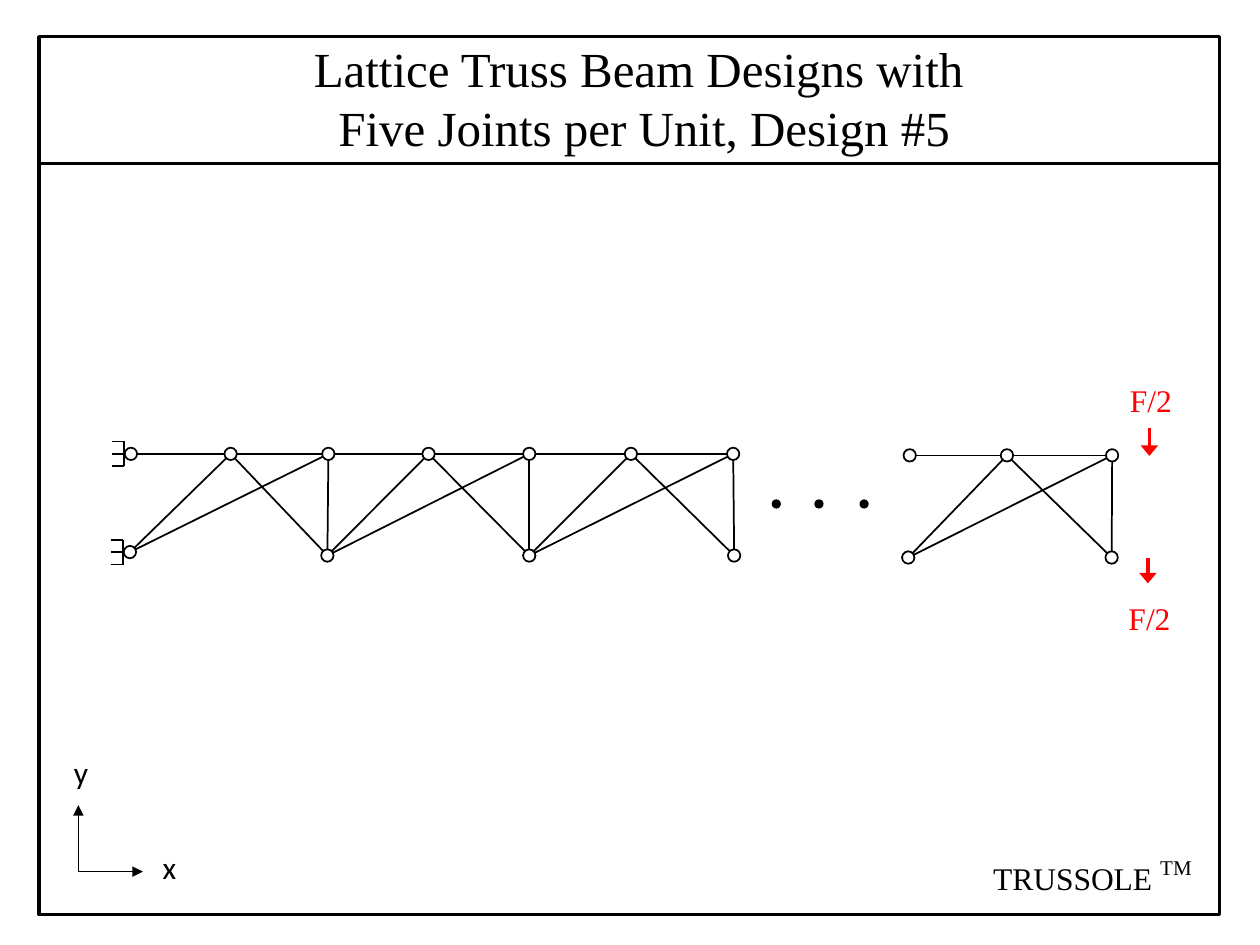
from pptx import Presentation
from pptx.dml.color import RGBColor as Rgb
from pptx.enum.shapes import MSO_CONNECTOR as Link, MSO_SHAPE as Kind
from pptx.enum.text import PP_ALIGN as Align
from pptx.oxml.ns import qn
from pptx.util import Cm, Pt
from lxml.etree import SubElement as Sub

BLACK, WHITE, RED = "000000", "FFFFFF", "FF0000"
SERIF, SANS = "Times New Roman", "Calibri"

TITLE = ["Lattice Truss Beam Designs with", "Five Joints per Unit, Design #5"]
FRAME = (0.79, 0.74, 23.8, 17.7)
RULE = 3.3
RUNS = [
    {"top": [2.64, 4.65, 6.62, 8.64, 10.67, 12.72, 14.78], "high": 9.15,
     "base": [(2.62, 11.13), (6.6, 11.2), (10.67, 11.2), (14.8, 11.2)]},
    {"top": [18.34, 20.3, 22.42], "high": 9.18,
     "base": [(18.31, 11.24), (22.41, 11.24)]},
]
JOINT, DOT = 0.25, 0.15
DOTS = [(15.65, 10.16), (16.51, 10.16), (17.42, 10.16)]
LOADS = [((23.17, 8.63), (23.17, 9.19)), ((23.14, 11.25), (23.14, 11.76))]
LOAD_TEXT = [("F/2", 22.53, 7.55, 1.5), ("F/2", 22.5, 11.96, 1.5)]
ORIGIN = (1.58, 17.57)
TIPS = [(2.88, 17.57), (1.58, 16.23)]
AXIS_TEXT = [("x", 3.03, 16.97, 0.79), ("y", 1.24, 15.06, 0.79)]
MARK = [("TRUSSOLE", 19.77, 17.2, 3.86, 18), ("TM", 23.14, 17.11, 1.3, 12)]


def color(code):
    return Rgb.from_string(code)


def line(host, start, end, ink=BLACK, width=1, head=None):
    item = host.add_connector(Link.STRAIGHT, *map(Cm, start + end))
    item.line.color.rgb = color(ink)
    item.line.width = Pt(width)
    props = item._element.spPr
    if head:
        Sub(props.find(qn("a:ln")), qn("a:tailEnd"), type="triangle", w=head)
    Sub(props, qn("a:effectLst"))


def shape(host, kind, box, fill=None, width=1):
    item = host.add_shape(kind, *map(Cm, box))
    item.shadow.inherit = False
    if fill:
        item.fill.solid()
        item.fill.fore_color.rgb = color(fill)
    else:
        item.fill.background()
    item.line.color.rgb = color(BLACK)
    item.line.width = Pt(width)


def disc(host, spot, size, fill):
    x, y = spot
    shape(host, Kind.OVAL, (x - size / 2, y - size / 2, size, size), fill)


def text(host, rows, x, y, wide, size=18, tall=1.02, face=SERIF, ink=BLACK,
         align=Align.LEFT):
    frame = host.add_textbox(*map(Cm, (x, y, wide, tall))).text_frame
    frame.word_wrap = True
    frame.text = "\n".join(rows)
    style = {"name": face, "size": Pt(size)}
    for para in frame.paragraphs:
        para.alignment = align
        for run in para.runs:
            for key, value in style.items():
                setattr(run.font, key, value)
            run.font.color.rgb = color(ink)
    return frame


def wall(host, spot):
    x, y = spot[0] - 0.14, spot[1]
    line(host, (x, y - 0.25), (x, y + 0.25))
    for step in (-0.25, 0, 0.25):
        line(host, (x - 0.25, y + step), (x, y + step))


def truss(host, top, high, base):
    nodes = [(x, high) for x in top]
    for i, (left, right) in enumerate(zip(base, base[1:])):
        a, b, c = nodes[2 * i:2 * i + 3]
        for start, end in [(a, b), (b, c), (left, b), (b, right),
                           (left, c), (c, right)]:
            line(host, start, end)
    for spot in nodes + base:
        disc(host, spot, JOINT, WHITE)
    return nodes[0], base[0]


def main():
    deck = Presentation()
    deck.slide_width, deck.slide_height = Cm(25.4), Cm(19.05)
    page = deck.slides.add_slide(deck.slide_layouts[6]).shapes

    beam = page.add_group_shape().shapes
    ends = [truss(beam, **run) for run in RUNS]
    for spot in ends[0]:
        wall(beam, spot)
    for spot in DOTS:
        disc(beam, spot, DOT, BLACK)
    for start, end in LOADS:
        line(beam, start, end, RED, 2, "lg")
    for word, *place in LOAD_TEXT:
        text(beam, [word], *place, ink=RED)

    axes = page.add_group_shape().shapes
    for tip in TIPS:
        line(axes, ORIGIN, tip, width=0.5, head="med")
    for word, *place in AXIS_TEXT:
        text(axes, [word], *place, face=SANS)

    shape(page, Kind.RECTANGLE, FRAME, width=2)
    line(page, (FRAME[0], RULE), (FRAME[0] + FRAME[2], RULE), width=2)
    head = text(page, TITLE, 5.65, 0.66, 14.45, 28, 2.64, align=Align.CENTER)
    head.paragraphs[1]._p.get_or_add_pPr().set("marL", str(Cm(0.22)))

    mark = page.add_group_shape().shapes
    for word, *place in MARK:
        text(mark, [word], *place)
    deck.save("out.pptx")


if __name__ == "__main__":
    main()
